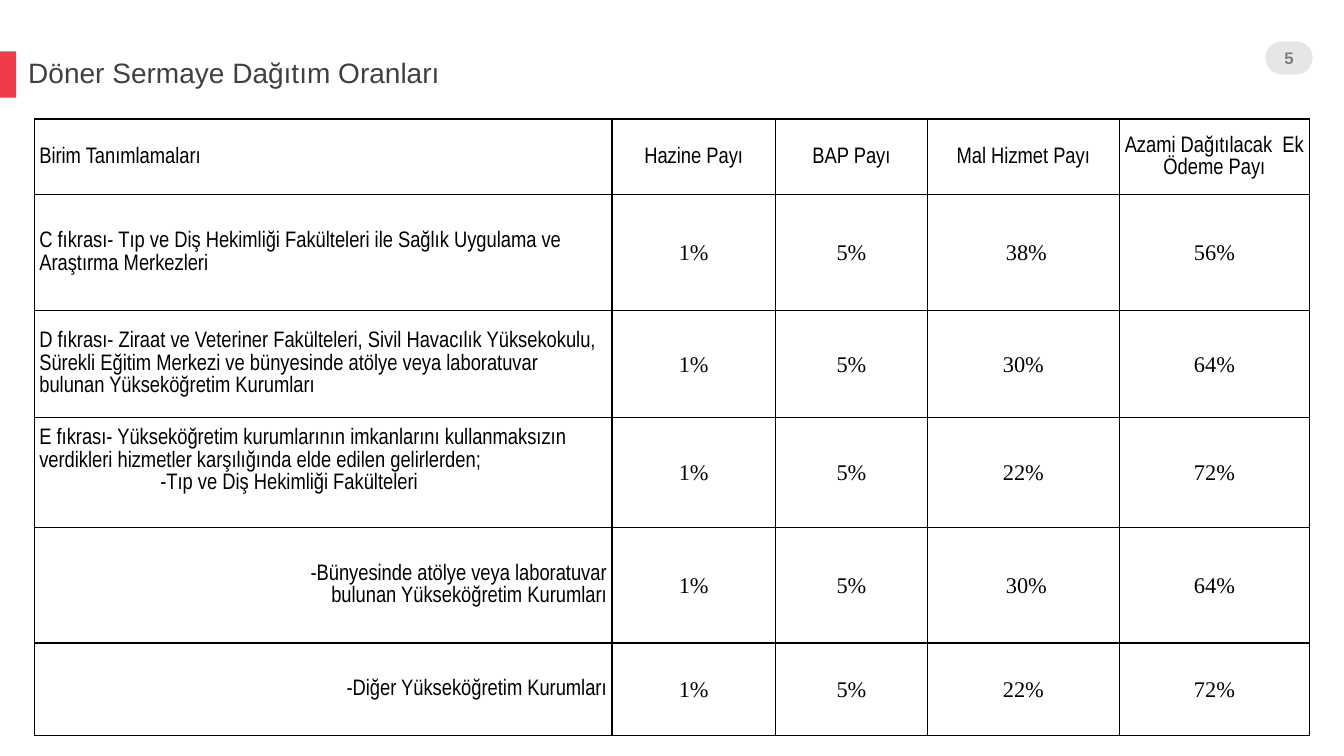
from dataclasses import dataclass

from lxml.etree import SubElement
from pptx import Presentation
from pptx.dml.color import RGBColor
from pptx.enum.shapes import MSO_SHAPE
from pptx.enum.text import MSO_ANCHOR, PP_ALIGN
from pptx.oxml.ns import qn
from pptx.shapes.autoshape import Shape
from pptx.slide import Slide
from pptx.table import _Cell
from pptx.text.text import TextFrame
from pptx.util import Inches, Pt

RED = RGBColor(0xF2, 0x3B, 0x48)
PILL_GRAY = RGBColor(0xE7, 0xE6, 0xE6)
NUMBER_GRAY = RGBColor(0x80, 0x80, 0x80)
TITLE_GRAY = RGBColor(0x40, 0x40, 0x40)
BLACK = RGBColor(0, 0, 0)

LABEL_FONT = "Arial Narrow"
VALUE_FONT = "Times New Roman"


@dataclass
class Line:
    text: str
    alignment: PP_ALIGN = PP_ALIGN.LEFT
    font: str = LABEL_FONT
    indent: float = 0


@dataclass
class Unit:
    height: float
    label: list[Line]
    shares: list[str]
    share_indent: float = 0
    label_bottom: float = 0


HEADINGS = ["Birim Tanımlamaları", "Hazine Payı", "BAP Payı", "Mal Hizmet Payı",
            "Azami Dağıtılacak  Ek Ödeme Payı"]
HEADING_HEIGHT = 0.75
COLUMN_WIDTHS = [5.73, 1.62, 1.51, 1.9, 1.89]
GOODS_COLUMN = 3

UNITS = [
    Unit(1.15, [Line("C fıkrası- Tıp ve Diş Hekimliği Fakülteleri ile Sağlık Uygulama ve "
                     "Araştırma Merkezleri")],
         ["1%", "5%", "38%", "56%"], share_indent=0.06),
    Unit(1.06, [Line("D fıkrası- Ziraat ve Veteriner Fakülteleri, Sivil Havacılık "
                     "Yüksekokulu, Sürekli Eğitim Merkezi ve bünyesinde atölye veya "
                     "laboratuvar bulunan Yükseköğretim Kurumları")],
         ["1%", "5%", "30%", "64%"]),
    Unit(1.09, [Line("E fıkrası- Yükseköğretim kurumlarının imkanlarını kullanmaksızın "
                     "verdikleri hizmetler karşılığında elde edilen gelirlerden;"),
                Line("-Tıp ve Diş Hekimliği Fakülteleri", indent=1.2)],
         ["1%", "5%", "22%", "72%"], label_bottom=0.23),
    Unit(1.15, [Line("-Bünyesinde atölye veya laboratuvar bulunan Yükseköğretim Kurumları",
                     PP_ALIGN.RIGHT, indent=2.4)],
         ["1%", "5%", "30%", "64%"], share_indent=0.06),
    Unit(0.92, [Line("-Diğer Yükseköğretim Kurumları", PP_ALIGN.RIGHT)],
         ["1%", "5%", "22%", "72%"]),
]


def clear_margins(frame: TextFrame) -> None:
    frame.margin_left = frame.margin_right = frame.margin_top = frame.margin_bottom = 0
    frame.vertical_anchor = MSO_ANCHOR.MIDDLE


def add_block(slide: Slide, left: float, top: float, width: float, height: float,
              rounding: float, color: RGBColor) -> Shape:
    shape = slide.shapes.add_shape(MSO_SHAPE.ROUNDED_RECTANGLE, Inches(left), Inches(top),
                                   Inches(width), Inches(height))
    shape.adjustments[0] = rounding
    shape.shadow.inherit = False
    shape.fill.solid()
    shape.fill.fore_color.rgb = color
    shape.line.fill.background()
    return shape


def add_title(slide: Slide, text: str) -> None:
    title = slide.shapes.title
    title.left, title.top = Inches(0.28), Inches(0.51)
    title.width, title.height = Inches(4.17), Inches(0.46)
    frame = title.text_frame
    frame.text = text
    clear_margins(frame)
    frame.word_wrap = False
    paragraph = frame.paragraphs[0]
    paragraph.alignment = PP_ALIGN.LEFT
    paragraph.line_spacing = 0.9
    paragraph.font.name = "Arial"
    paragraph.font.size = Pt(20)
    paragraph.font.color.rgb = TITLE_GRAY


def add_page_number(slide: Slide, number: str) -> None:
    pill = add_block(slide, 12.55, 0.41, 0.47, 0.33, 0.5, PILL_GRAY)
    frame = pill.text_frame
    frame.text = number
    clear_margins(frame)
    paragraph = frame.paragraphs[0]
    paragraph.alignment = PP_ALIGN.CENTER
    paragraph.font.name = "Arial"
    paragraph.font.size = Pt(12)
    paragraph.font.bold = True
    paragraph.font.color.rgb = NUMBER_GRAY


def fill_cell(cell: _Cell, lines: list[Line], bottom: float = 0) -> None:
    """Write the lines and give the cell black borders and no fill."""
    cell.margin_left = cell.margin_right = Inches(0.05)
    cell.margin_top, cell.margin_bottom = 0, Inches(bottom)
    cell.vertical_anchor = MSO_ANCHOR.MIDDLE
    frame = cell.text_frame
    frame.text = "\n".join(line.text for line in lines)
    for paragraph, line in zip(frame.paragraphs, lines):
        paragraph.alignment = line.alignment
        paragraph.line_spacing = 1.07
        if line.indent:
            paragraph._p.get_or_add_pPr().set("marL", str(Inches(line.indent)))
        paragraph.font.name = line.font
        paragraph.font.size = Pt(16)
        paragraph.font.color.rgb = BLACK
    properties = cell._tc.get_or_add_tcPr()
    for side in ("a:lnL", "a:lnR", "a:lnT", "a:lnB"):
        border = SubElement(properties, qn(side), w=str(Pt(1)))
        solid = SubElement(border, qn("a:solidFill"))
        SubElement(solid, qn("a:srgbClr"), val=str(BLACK))
    cell.fill.background()


def add_share_table(slide: Slide) -> None:
    heights = [HEADING_HEIGHT] + [unit.height for unit in UNITS]
    table = slide.shapes.add_table(
        len(heights), len(COLUMN_WIDTHS), Inches(0.34), Inches(1.18),
        Inches(sum(COLUMN_WIDTHS)), Inches(sum(heights))).table
    table.first_row = table.horz_banding = False
    for column, width in zip(table.columns, COLUMN_WIDTHS):
        column.width = Inches(width)
    for row, height in zip(table.rows, heights):
        row.height = Inches(height)

    for column, heading in enumerate(HEADINGS):
        alignment = PP_ALIGN.CENTER if column else PP_ALIGN.LEFT
        fill_cell(table.cell(0, column), [Line(heading, alignment)])
    for row, unit in enumerate(UNITS, start=1):
        fill_cell(table.cell(row, 0), unit.label, unit.label_bottom)
        for column, share in enumerate(unit.shares, start=1):
            indent = unit.share_indent if column == GOODS_COLUMN else 0
            fill_cell(table.cell(row, column),
                      [Line(share, PP_ALIGN.CENTER, VALUE_FONT, indent)])


def main() -> None:
    presentation = Presentation()
    presentation.slide_width = Inches(13.33)
    presentation.slide_height = Inches(7.5)
    slide = presentation.slides.add_slide(presentation.slide_layouts[5])
    add_block(slide, 0, 0.51, 0.16, 0.46, 0, RED)
    add_title(slide, "Döner Sermaye Dağıtım Oranları")
    add_page_number(slide, "5")
    add_share_table(slide)
    presentation.save("out.pptx")


if __name__ == "__main__":
    main()
